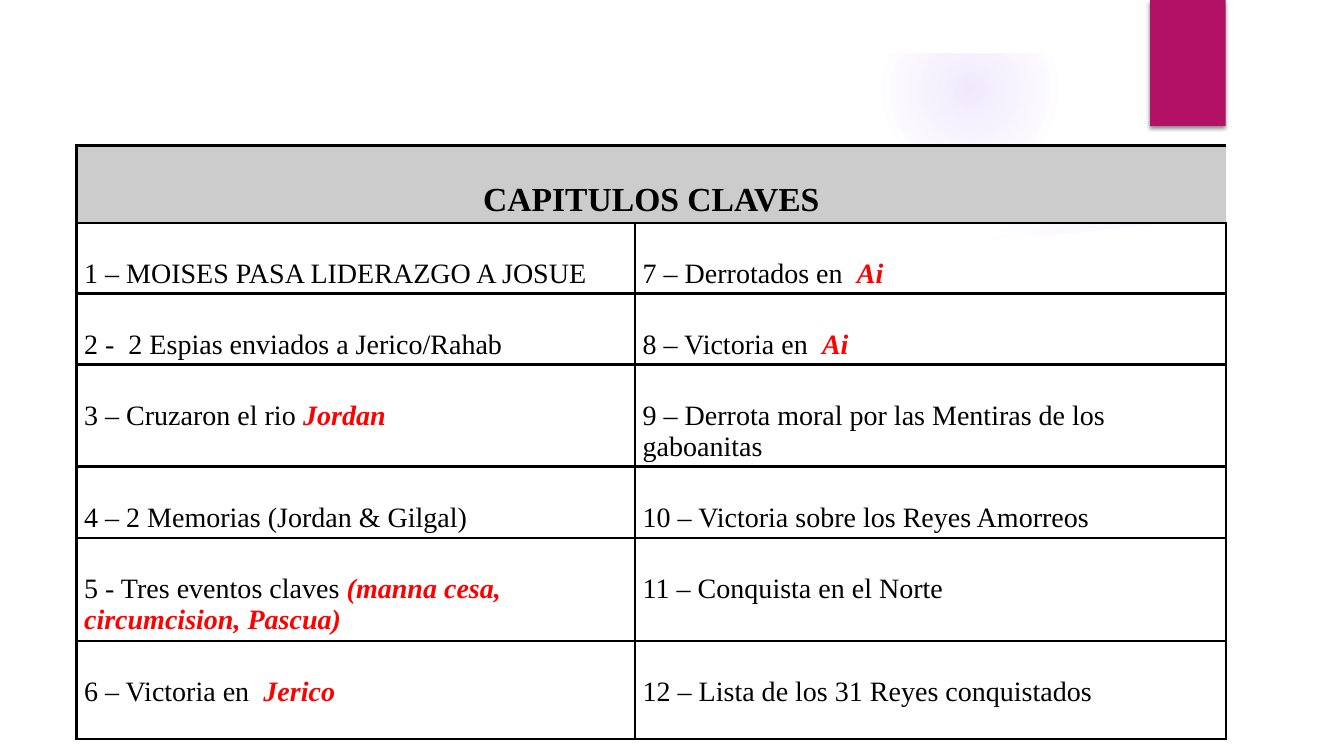
"""Build the slide of key chapters as a bordered table on a soft backdrop."""
from dataclasses import dataclass

from lxml.etree import SubElement as Sub
from pptx import Presentation
from pptx.dml.color import RGBColor as RGB
from pptx.enum.shapes import MSO_SHAPE as Kind
from pptx.enum.text import PP_ALIGN as Align
from pptx.oxml.ns import qn
from pptx.util import Pt


@dataclass(frozen=True)
class Theme:
    """Hold the colours, font and type sizes."""
    ink: str = "000000"
    red: str = "FF0000"
    gray: str = "CCCCCC"
    white: str = "FFFFFF"
    pink: str = "B31166"
    glow: str = "9B6BF2"
    face: str = "Times New Roman"
    head: float = 24
    body: float = 20
    rule: float = 1.8


LOOK = Theme()
BASE = {"name": LOOK.face, "bold": False, "italic": False, "size": Pt(LOOK.body)}
BOLD = {**BASE, "bold": True, "size": Pt(LOOK.head)}
MARK = {**BASE, "bold": True, "italic": True}
INSET = {"margin_left": Pt(5.4), "margin_right": Pt(5.4),
         "margin_top": Pt(25.5), "margin_bottom": Pt(3)}
PLAIN = {"first_row": False, "horz_banding": False}

TITLE = "CAPITULOS CLAVES"
ROWS = [
    ("1 – MOISES PASA LIDERAZGO A JOSUE", "7 – Derrotados en  *Ai"),
    ("2 -  2 Espias enviados a Jerico/Rahab", "8 – Victoria en  *Ai"),
    ("3 – Cruzaron el rio *Jordan",
     "9 – Derrota moral por las Mentiras de los gaboanitas"),
    ("4 – 2 Memorias (Jordan & Gilgal)", "10 – Victoria sobre los Reyes Amorreos"),
    ("5 - Tres eventos claves *(manna cesa, circumcision, Pascua)",
     "11 – Conquista en el Norte"),
    ("6 – Victoria en  *Jerico", "12 – Lista de los 31 Reyes conquistados"),
]
WIDE = [399, 422]
HIGH = [54.7, 50.4, 50.4, 72, 51, 73.4, 70]
CURVE = [(36, 147), (97, 155), (204, 165), (316, 173), (437, 177), (547, 178),
         (663, 175), (763, 167), (844, 158), (924, 147), (924, 504), (36, 504)]


def put(item, vals):
    """Set each named value on an object."""
    for key, val in vals.items():
        setattr(item, key, val)


def node(top, tag, **vals):
    """Add a drawing element with its attributes."""
    return Sub(top, qn(f"a:{tag}"), {k: str(v) for k, v in vals.items()})


def tint(top, hue, alpha=100):
    """Add a colour with its opacity in percent."""
    node(node(top, "srgbClr", val=hue), "alpha", val=alpha * 1000)


def paint(shape, hue):
    """Give a shape a flat colour with no line or shadow."""
    shape.shadow.inherit = False
    shape.line.fill.background()
    shape.fill.solid()
    shape.fill.fore_color.rgb = RGB.from_string(hue)
    return shape


def block(slide, kind, box, hue):
    """Add a flat preset shape."""
    return paint(slide.shapes.add_shape(kind, *map(Pt, box)), hue)


def halo(slide, box, stops):
    """Add a circle that fades out from its centre."""
    shape = block(slide, Kind.OVAL, box, LOOK.glow)
    old = shape.element.spPr.find(qn("a:solidFill"))
    grad = old.makeelement(qn("a:gradFill"), {"rotWithShape": "1"})
    old.getparent().replace(old, grad)
    group = node(grad, "gsLst")
    for pos, alpha in stops:
        tint(node(group, "gs", pos=pos * 1000), LOOK.glow, alpha)
    ring = node(grad, "path", path="circle")
    node(ring, "fillToRect", **dict.fromkeys("ltrb", 50000))


def panel(slide):
    """Add the white panel with its curved top."""
    start, *rest = [(Pt(x), Pt(y)) for x, y in CURVE]
    form = slide.shapes.build_freeform(*start)
    form.add_line_segments(rest, close=True)
    paint(form.convert_to_shape(), LOOK.white)


def tab(slide):
    """Add the pink tab with a soft shadow below it."""
    shape = block(slide, Kind.RECTANGLE, (821.5, 0, 54, 90), LOOK.pink)
    fx = shape.element.spPr.find(qn("a:effectLst"))
    drop = node(fx, "outerShdw", blurRad=Pt(3), dist=Pt(2), dir=5400000)
    tint(drop, LOOK.ink, 45)


def write(cell, text, base, align):
    """Fill a cell with text whose part after a star is marked."""
    put(cell, INSET)
    para = cell.text_frame.paragraphs[0]
    para.alignment = align
    lead, _, tail = text.partition("*")
    for part, form, hue in ((lead, base, LOOK.ink), (tail, MARK, LOOK.red)):
        if part:
            run = para.add_run()
            run.text = part
            put(run.font, form)
            run.font.color.rgb = RGB.from_string(hue)


def edge(cell, sides):
    """Draw the named borders of a cell."""
    prop = cell._tc.get_or_add_tcPr()
    for side in "LRTB":
        line = node(prop, f"ln{side}", w=Pt(LOOK.rule))
        if side in sides:
            tint(node(line, "solidFill"), LOOK.ink)
        else:
            node(line, "noFill")


def grid(slide):
    """Add the table of chapters."""
    box = map(Pt, (54.7, 104, sum(WIDE), sum(HIGH)))
    table = slide.shapes.add_table(len(HIGH), len(WIDE), *box).table
    put(table, PLAIN)
    for col, width in zip(table.columns, WIDE):
        col.width = Pt(width)
    for row, height in zip(table.rows, HIGH):
        row.height = Pt(height)
    top = table.cell(0, 0)
    top.merge(table.cell(0, 1))
    write(top, TITLE, BOLD, Align.CENTER)
    for cell, sides in zip(table.rows[0].cells, ("LTB", "TB")):
        edge(cell, sides)
        cell.fill.solid()
        cell.fill.fore_color.rgb = RGB.from_string(LOOK.gray)
    for r, pair in enumerate(ROWS, 1):
        for c, text in enumerate(pair):
            cell = table.cell(r, c)
            write(cell, text, BASE, Align.LEFT)
            edge(cell, "LRTB")
            cell.fill.background()


def main():
    """Build and save the deck."""
    deck = Presentation()
    put(deck, {"slide_width": Pt(960), "slide_height": Pt(540)})
    slide = deck.slides.add_slide(deck.slide_layouts[6])
    halo(slide, (677.5, 132, 222, 222), [(0, 7), (36, 6), (69, 0), (100, 0)])
    halo(slide, (630, 1, 126, 126), [(0, 14), (36, 7), (73, 0), (100, 0)])
    panel(slide)
    frame = block(slide, Kind.FRAME, (0, 0, 960, 540), LOOK.white)
    frame.adjustments[0] = 0.07
    tab(slide)
    grid(slide)
    deck.save("out.pptx")


if __name__ == "__main__":
    main()
